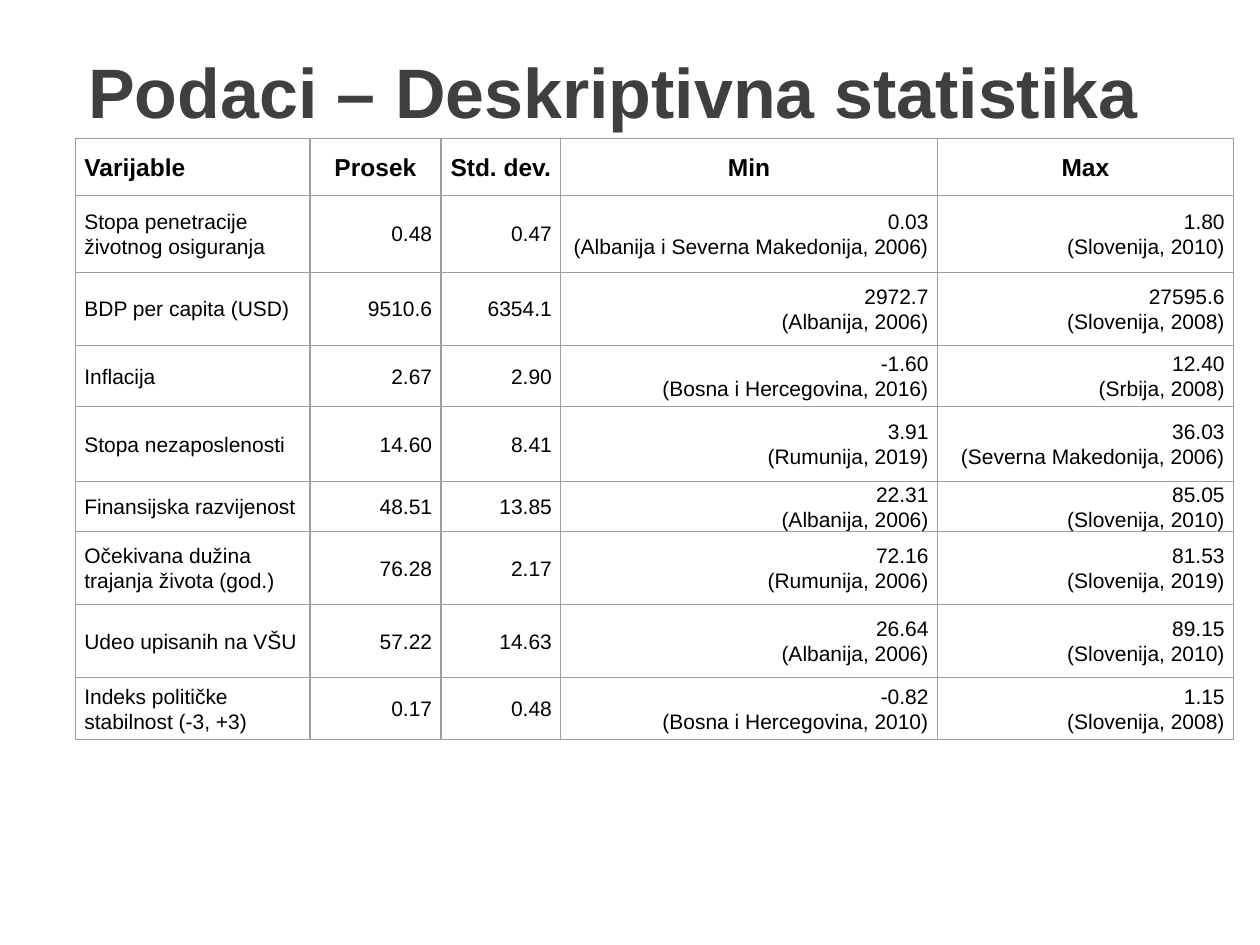
from typing import NamedTuple

from lxml.etree import SubElement
from pptx import Presentation
from pptx.dml.color import RGBColor
from pptx.enum.text import MSO_ANCHOR as Anchor, MSO_AUTO_SIZE as AutoSize, PP_ALIGN as Align
from pptx.oxml.ns import qn
from pptx.util import Inches, Pt


class Variable(NamedTuple):
    name: str
    mean: str
    std_dev: str
    low: str
    high: str
    height: float


HEADER = Variable("Varijable", "Prosek", "Std. dev.", "Min", "Max", 0.45)
VARIABLES = [
    Variable("Stopa penetracije životnog osiguranja", "0.48", "0.47",
             "0.03\n(Albanija i Severna Makedonija, 2006)", "1.80\n(Slovenija, 2010)", 0.61),
    Variable("BDP per capita (USD)", "9510.6", "6354.1",
             "2972.7\n(Albanija, 2006)", "27595.6\n(Slovenija, 2008)", 0.58),
    Variable("Inflacija", "2.67", "2.90",
             "-1.60\n(Bosna i Hercegovina, 2016)", "12.40\n(Srbija, 2008)", 0.49),
    Variable("Stopa nezaposlenosti", "14.60", "8.41",
             "3.91\n(Rumunija, 2019)", "36.03\n(Severna Makedonija, 2006)", 0.59),
    Variable("Finansijska razvijenost", "48.51", "13.85",
             "22.31\n(Albanija, 2006)", "85.05\n(Slovenija, 2010)", 0.39),
    Variable("Očekivana dužina trajanja života (god.)", "76.28", "2.17",
             "72.16\n(Rumunija, 2006)", "81.53\n(Slovenija, 2019)", 0.58),
    Variable("Udeo upisanih na VŠU", "57.22", "14.63",
             "26.64\n(Albanija, 2006)", "89.15\n(Slovenija, 2010)", 0.58),
    Variable("Indeks političke stabilnost (-3, +3)", "0.17", "0.48",
             "-0.82\n(Bosna i Hercegovina, 2010)", "1.15\n(Slovenija, 2008)", 0.49),
]
COLUMN_WIDTHS = [1.86, 1.04, 0.95, 2.99, 2.35]
CELL_FORMAT = {
    "margin_left": Inches(0.07), "margin_right": Inches(0.07),
    "margin_top": 0, "margin_bottom": 0, "vertical_anchor": Anchor.MIDDLE,
}
TITLE_FONT = {"name": "Arial", "size": Pt(40), "bold": True}
HEADER_FONT = {"name": "Arial", "size": Pt(14), "bold": True}
BODY_FONT = {"name": "Arial", "size": Pt(12), "bold": False}


def rgb(color: str) -> RGBColor:
    return RGBColor.from_string(color)


def apply(target, values: dict) -> None:
    for name, value in values.items():
        setattr(target, name, value)


def add_borders(cell, color: str, width: float) -> None:
    tc_pr = cell._tc.get_or_add_tcPr()
    for side in ("lnL", "lnR", "lnT", "lnB"):
        line = SubElement(tc_pr, qn(f"a:{side}"), w=str(Pt(width)))
        fill = SubElement(line, qn("a:solidFill"))
        SubElement(fill, qn("a:srgbClr"), val=color)


def fill_cell(cell, text: str, font: dict, align: Align) -> None:
    apply(cell, CELL_FORMAT)
    add_borders(cell, "9E9E9E", 0.75)
    cell.fill.background()
    cell.text = text
    for p in cell.text_frame.paragraphs:
        apply(p, {"alignment": align, "line_spacing": 1.07})
        for r in p.runs:
            apply(r.font, font)
            r.font.color.rgb = rgb("000000")


def add_title(slide, text: str) -> None:
    title = slide.shapes.title
    apply(title, {"left": Inches(0.6), "top": Inches(0.36),
                  "width": Inches(8.89), "height": Inches(0.74)})
    tf = title.text_frame
    apply(tf, {"text": text, "word_wrap": True, "auto_size": AutoSize.NONE,
               "vertical_anchor": Anchor.BOTTOM})
    p = tf.paragraphs[0]
    p.alignment = Align.LEFT
    apply(p.runs[0].font, TITLE_FONT)
    p.runs[0].font.color.rgb = rgb("3F3F3F")


def add_statistics(slide) -> None:
    rows = [HEADER, *VARIABLES]
    frame = slide.shapes.add_table(
        len(rows), len(COLUMN_WIDTHS), Inches(0.6), Inches(1.1),
        Inches(sum(COLUMN_WIDTHS)), Inches(sum(row.height for row in rows)))
    table = frame.table
    apply(table, {"first_row": False, "horz_banding": False})
    for column, width in zip(table.columns, COLUMN_WIDTHS):
        column.width = Inches(width)
    for i, row in enumerate(rows):
        table.rows[i].height = Inches(row.height)
        font, align = (BODY_FONT, Align.RIGHT) if i else (HEADER_FONT, Align.CENTER)
        for j, text in enumerate(row[:-1]):
            fill_cell(table.cell(i, j), text, font, align if j else Align.LEFT)


def main() -> None:
    prs = Presentation()
    apply(prs, {"slide_width": Inches(10), "slide_height": Inches(7.5)})
    slide = prs.slides.add_slide(prs.slide_layouts[5])  # title only
    add_title(slide, "Podaci – Deskriptivna statistika")
    add_statistics(slide)
    prs.save("out.pptx")


if __name__ == "__main__":
    main()
